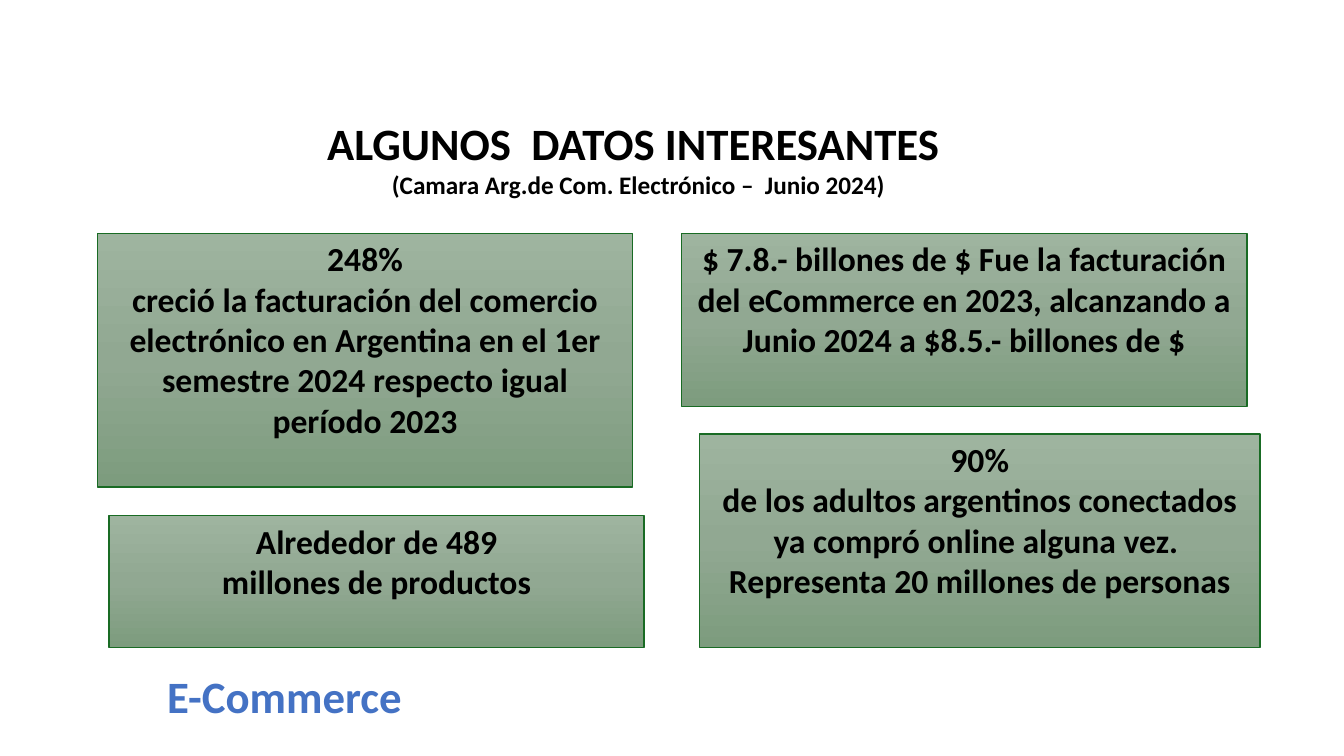
from copy import deepcopy

from pptx import Presentation
from pptx.dml.color import RGBColor
from pptx.enum import shapes, text
from pptx.oxml import ns
from pptx.util import Pt

FONT = "Calibri"
BLACK, BLUE, GREEN = "000000", "4472C4", "196B24"
GRADIENT = [(0, "9EB49F"), (0.5, "91A892"), (1, "7D9C7E")]

TITLE = [("ALGUNOS  DATOS INTERESANTES ", 32), ("(Camara Arg.de Com. Electrónico –  Junio 2024)", 18)]
TITLE_BOX = (216, 79.2, 480.2, 67.7)
FOOTER = [("E-Commerce", 32)]
FOOTER_BOX = (112.3, 473.8, 296.6, 46)

FACT_SIZE = 24
FACTS = [
    ((69.6, 166.6, 382.3, 181.4), [
        "248%",
        "creció la facturación del comercio electrónico en Argentina en el 1er "
        "semestre 2024 respecto igual período 2023",
    ]),
    ((486.7, 166.6, 403.9, 123.8), [
        "$ 7.8.- billones de $ Fue la facturación del eCommerce en 2023, "
        "alcanzando a Junio 2024 a $8.5.- billones de $",
    ]),
    ((77.8, 368.2, 382.3, 94.3), ["Alrededor de 489", "millones de productos"]),
    ((499.7, 310, 400.3, 152.5), [
        "90%",
        "de los adultos argentinos conectados ya compró online alguna vez.  "
        "Representa 20 millones de personas",
    ]),
]


def color(value):
    return RGBColor.from_string(value)


def write(shape, lines, fill, alignment):
    frame = shape.text_frame
    frame.word_wrap = True
    frame.auto_size = text.MSO_AUTO_SIZE.NONE
    frame.vertical_anchor = text.MSO_ANCHOR.TOP
    frame.text = "\n".join(line for line, size in lines)
    for paragraph, (line, size) in zip(frame.paragraphs, lines):
        paragraph.alignment = alignment
        paragraph.font.name = FONT
        paragraph.font.size = Pt(size)
        paragraph.font.bold = True
        paragraph.font.color.rgb = color(fill)


def paint_gradient(shape):
    shape.fill.gradient()
    shape.fill.gradient_angle = 270
    stop_list = shape._element.spPr.find(".//" + ns.qn("a:gsLst"))
    stop_list.insert(1, deepcopy(stop_list[0]))
    for stop, (position, value) in zip(shape.fill.gradient_stops, GRADIENT):
        stop.position = position
        stop.color.rgb = color(value)


def add_fact(slide, box, lines):
    shape = slide.shapes.add_shape(shapes.MSO_SHAPE.RECTANGLE, *map(Pt, box))
    shape.shadow.inherit = False
    paint_gradient(shape)
    shape.line.color.rgb = color(GREEN)
    shape.line.width = Pt(1)
    write(shape, [(line, FACT_SIZE) for line in lines], BLACK, text.PP_ALIGN.CENTER)


def main():
    presentation = Presentation()
    presentation.slide_width, presentation.slide_height = Pt(960), Pt(540)
    slide = presentation.slides.add_slide(presentation.slide_layouts[5])

    title = slide.shapes.title
    title.left, title.top, title.width, title.height = map(Pt, TITLE_BOX)
    write(title, TITLE, BLACK, text.PP_ALIGN.CENTER)

    for box, lines in FACTS:
        add_fact(slide, box, lines)

    footer = slide.shapes.add_textbox(*map(Pt, FOOTER_BOX))
    write(footer, FOOTER, BLUE, text.PP_ALIGN.LEFT)

    presentation.save("out.pptx")


if __name__ == "__main__":
    main()
